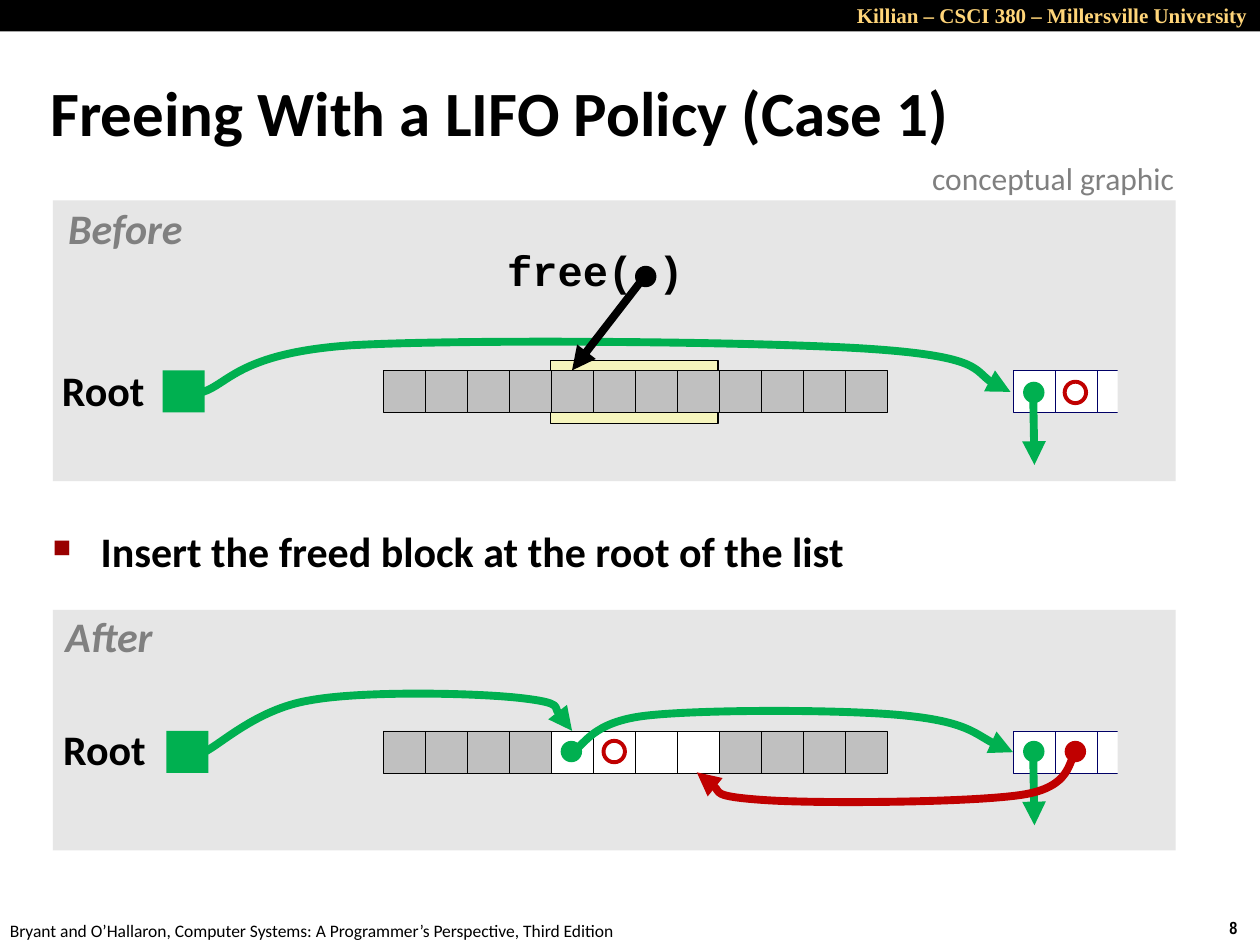
import pptx
import pptx.util
import pptx.dml.color
import pptx.enum.shapes
import pptx.enum.text
import pptx.oxml.ns
import lxml.etree

Inches = pptx.util.Inches
Pt = pptx.util.Pt
RGBColor = pptx.dml.color.RGBColor
KIND = pptx.enum.shapes.MSO_SHAPE
ALIGN = pptx.enum.text.PP_ALIGN
FIT = pptx.enum.text.MSO_AUTO_SIZE
qn = pptx.oxml.ns.qn

BLACK = RGBColor(0x00, 0x00, 0x00)
WHITE = RGBColor(0xFF, 0xFF, 0xFF)
PANEL = RGBColor(0xE6, 0xE6, 0xE6)
CREAM = RGBColor(0xF6, 0xF5, 0xBD)
SILVER = RGBColor(0xC0, 0xC0, 0xC0)
GRAY = RGBColor(0x80, 0x80, 0x80)
GREEN = RGBColor(0x00, 0xB0, 0x50)
RED = RGBColor(0xC0, 0x00, 0x00)
NAVY = RGBColor(0x00, 0x00, 0x66)
GOLD = RGBColor(0xFF, 0xD5, 0x79)

deck = pptx.Presentation()
deck.slide_width = Inches(10)
deck.slide_height = Inches(7.5)
slide = deck.slides.add_slide(deck.slide_layouts[5])
shapes = slide.shapes


def add_box(kind, left, top, width, height, fill, line=None, weight=0.25):
    box = shapes.add_shape(kind, Inches(left), Inches(top), Inches(width), Inches(height))
    box.shadow.inherit = False
    if fill is None:
        box.fill.background()
    else:
        box.fill.solid()
        box.fill.fore_color.rgb = fill
    if line is None:
        box.line.fill.background()
    else:
        box.line.color.rgb = line
        box.line.width = Pt(weight)


def add_text(text, left, top, width, height, size, color, font="Calibri", bold=True,
             italic=False, align=ALIGN.LEFT, inset=0.1, space=1.0, wrap=False,
             fit=FIT.SHAPE_TO_FIT_TEXT):
    label = shapes.add_textbox(Inches(left), Inches(top), Inches(width), Inches(height))
    frame = label.text_frame
    frame.word_wrap = wrap
    frame.auto_size = fit
    frame.margin_left = frame.margin_right = Inches(inset)
    frame.text = text
    par = frame.paragraphs[0]
    par.alignment = align
    par.line_spacing = space
    run = par.runs[0].font
    run.name, run.size, run.bold, run.italic = font, Pt(size), bold, italic
    run.color.rgb = color
    return par


title = shapes.title
title.left, title.top = Inches(0.3), Inches(0.5)
title.width, title.height = Inches(9.53), Inches(0.86)
title.text_frame.text = "Freeing With a LIFO Policy (Case 1)"
title.text_frame.auto_size = FIT.NONE
title.text_frame.vertical_anchor = pptx.enum.text.MSO_ANCHOR.MIDDLE
par = title.text_frame.paragraphs[0]
par.alignment = ALIGN.LEFT
par.line_spacing = 0.87
font = par.runs[0].font
font.name, font.size, font.bold = "Calibri", Pt(36), True
font.color.rgb = BLACK

add_box(KIND.RECTANGLE, 0, 0, 10, 0.25, BLACK)
add_text("Killian – CSCI 380 – Millersville University", 5.5, -0.03, 4.5, 0.3, 12, GOLD,
         font="Times New Roman", align=ALIGN.RIGHT, wrap=True)
add_text("8", 9.66, 7.23, 0.34, 0.27, 10, BLACK, font="Arial Narrow")
add_text("Bryant and O’Hallaron, Computer Systems: A Programmer’s Perspective, Third Edition",
         -0.02, 7.25, 5.08, 0.27, 10, BLACK, bold=False)

add_box(KIND.RECTANGLE, 0.42, 4.84, 8.91, 1.91, PANEL)
add_box(KIND.RECTANGLE, 0.42, 1.59, 8.91, 2.23, PANEL)
add_box(KIND.RECTANGLE, 4.37, 2.86, 1.33, 0.5, CREAM, BLACK, 0.75)

point = add_text("Insert the freed block at the root of the list", 0.32, 4.15, 9.09, 0.61,
                 24, BLACK, space=0.95, wrap=True, fit=FIT.NONE)
props = point._p.get_or_add_pPr()
props.set("marL", str(Inches(0.38)))
props.set("indent", str(Inches(-0.38)))
color = lxml.etree.SubElement(props, qn("a:buClr"))
lxml.etree.SubElement(color, qn("a:srgbClr"), val="990000")
lxml.etree.SubElement(props, qn("a:buSzPct"), val="60000")
lxml.etree.SubElement(props, qn("a:buChar"), char="■")

SIDE = 1 / 3
DOT = 0.17
for top, root, block in ((2.94, 1.29, SILVER), (5.8, 1.32, WHITE)):
    for col in range(12):
        fill = block if 4 <= col < 8 else SILVER
        add_box(KIND.RECTANGLE, 3.04 + col * SIDE, top, SIDE, SIDE, fill, BLACK)
    add_box(KIND.RECTANGLE, root, top, SIDE, SIDE, GREEN)
    for col in range(3):
        add_box(KIND.RECTANGLE, 8.04 + col * SIDE, top, SIDE, SIDE, WHITE, NAVY)
    add_box(KIND.RECTANGLE, 8.87, top - 0.08, 0.33, 0.5, PANEL)

for left, top, fill, line in (
        (8.12, 3.03, GREEN, None), (8.45, 3.03, None, RED), (5.04, 2.11, BLACK, None),
        (4.45, 5.88, GREEN, None), (8.12, 5.88, GREEN, None), (8.45, 5.88, RED, None),
        (4.79, 5.88, None, RED)):
    add_box(KIND.OVAL, left, top, DOT, DOT, fill, line, 2.25)

for text, left, top, width, color, name, italic in (
        ("free( )", 3.97, 1.94, 1.51, BLACK, "Courier New", False),
        ("Root", 0.44, 2.89, 0.76, BLACK, "Calibri", False),
        ("Root", 0.45, 5.74, 0.76, BLACK, "Calibri", False),
        ("Before", 0.48, 1.6, 1.03, GRAY, "Calibri", True),
        ("After", 0.46, 4.84, 0.81, GRAY, "Calibri", True)):
    add_text(text, left, top, width, 0.47, 24, color, font=name, italic=italic,
             align=ALIGN.CENTER, inset=0.05, space=0.9)
add_text("conceptual graphic", 7.3, 1.21, 2.17, 0.4, 18, GRAY, bold=False)

arrows = (
    (GREEN, [(1.61, 3.11), (1.81, 3.05), (1.9, 2.8), (2.79, 2.74), (3.67, 2.69),
             (6.05, 2.71), (6.92, 2.77), (7.79, 2.83), (7.79, 3.04), (8.02, 3.11)]),
    (GREEN, [(8.2, 3.11), (8.21, 3.69)]),
    (BLACK, [(5.12, 2.19), (4.54, 2.94)]),
    (GREEN, [(8.2, 5.97), (8.21, 6.55)]),
    (GREEN, [(4.54, 5.97), (4.64, 5.92), (4.69, 5.73), (5.13, 5.68), (5.57, 5.63),
             (6.71, 5.63), (7.19, 5.68), (7.67, 5.73), (7.86, 5.91), (8.04, 5.97)]),
    (RED, [(8.54, 5.98), (8.47, 6.03), (8.52, 6.25), (8.1, 6.31), (7.69, 6.37),
           (6.49, 6.38), (6.06, 6.35), (5.63, 6.32), (5.64, 6.18), (5.53, 6.13)]),
    (GREEN, [(1.62, 5.97), (1.76, 5.9), (2.04, 5.63), (2.45, 5.56), (2.87, 5.48),
             (3.78, 5.5), (4.13, 5.54), (4.48, 5.58), (4.46, 5.74), (4.54, 5.8)]),
)
for color, knots in arrows:
    ends = [(Inches(x), Inches(y)) for x, y in knots]
    if len(ends) == 2:
        arrow = shapes.add_connector(pptx.enum.shapes.MSO_CONNECTOR.STRAIGHT, *ends[0], *ends[1])
    else:
        outline = shapes.build_freeform(*ends[0])
        outline.add_line_segments(ends[1:], close=False)
        arrow = outline.convert_to_shape()
        arrow.fill.background()
        legs = list(arrow._element.iter(qn("a:lnTo")))
        track = legs[0].getparent()
        for start in range(0, len(legs), 3):
            curve = lxml.etree.SubElement(track, qn("a:cubicBezTo"))
            for leg in legs[start:start + 3]:
                curve.append(leg[0])
                track.remove(leg)
    arrow.line.color.rgb = color
    arrow.line.width = Pt(4.5)
    stroke = arrow.line._get_or_add_ln()
    lxml.etree.SubElement(stroke, qn("a:tailEnd"), type="triangle")
    lxml.etree.SubElement(arrow._element.spPr, qn("a:effectLst"))

deck.save("out.pptx")
